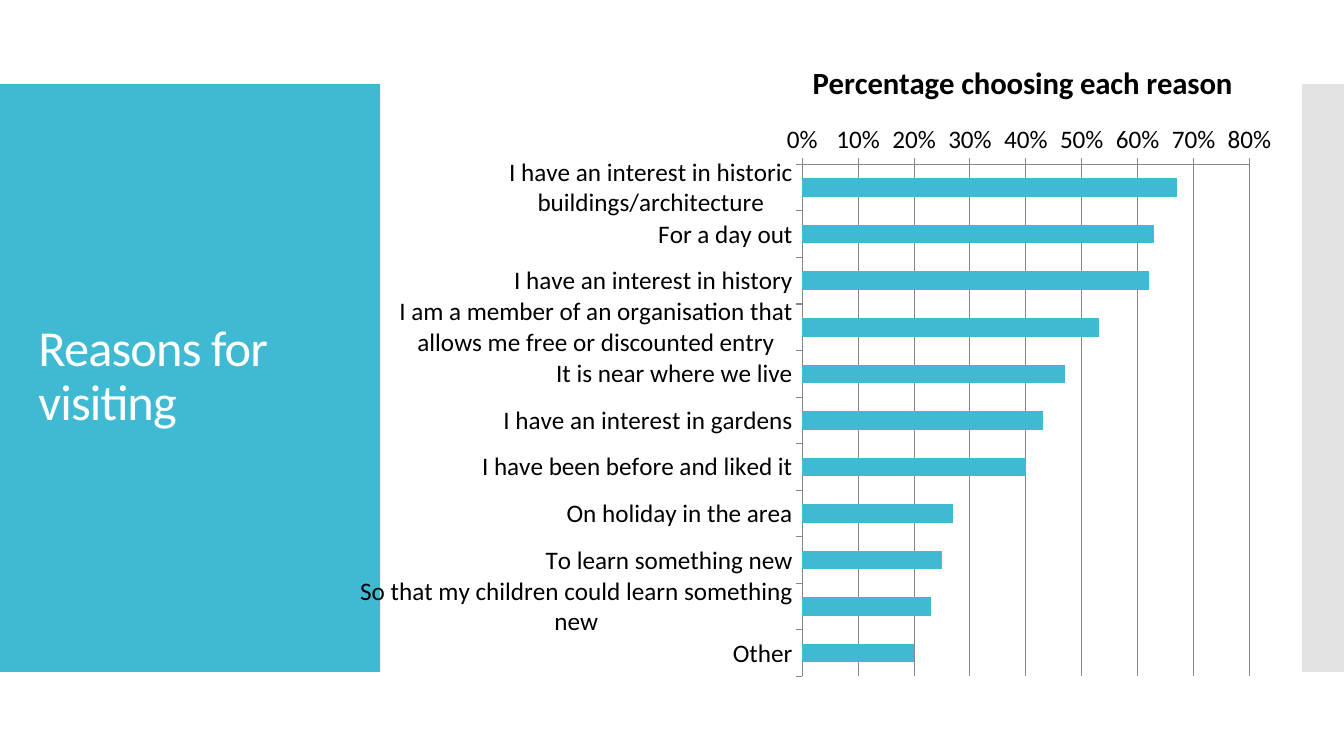
import dataclasses
import typing

import lxml.etree
import pptx
import pptx.chart.data
import pptx.dml.color
import pptx.enum.chart
import pptx.enum.shapes
import pptx.enum.text
import pptx.oxml.ns
import pptx.util

EMU_PER_PX = 9525
TITLE_ONLY_LAYOUT = 5


@dataclasses.dataclass(frozen=True)
class Theme:
    font: str = "Calibri"
    accent: str = "40BAD2"
    strip: str = "C8C8C8"
    axis: str = "868686"
    dark: str = "000000"
    light: str = "FFFFFF"
    heading_size: float = 36
    chart_title_size: float = 22
    label_size: float = 18


@dataclasses.dataclass(frozen=True)
class Area:
    left: int
    top: int
    width: int
    height: int

    def emu(self) -> dict[str, int]:
        return {name: value * EMU_PER_PX for name, value in dataclasses.asdict(self).items()}


@dataclasses.dataclass(frozen=True)
class Panel:
    area: Area
    colour: str
    opacity: int = 100


@dataclasses.dataclass(frozen=True)
class Reason:
    label: str
    share: float


THEME = Theme()
PAGE = Area(0, 0, 1280, 720)
TITLE_AREA = Area(27, 118, 309, 483)
CHART_AREA = Area(343, 47, 885, 612)
PANELS = [
    Panel(Area(0, 80, 362, 560), THEME.accent),
    Panel(Area(1240, 80, 40, 560), THEME.strip, opacity=50),
]
HEADING = "Reasons for visiting"
CHART_TITLE = "Percentage choosing each reason"
REASONS = [
    Reason("I have an interest in historic buildings/architecture", 0.67),
    Reason("For a day out", 0.63),
    Reason("I have an interest in history", 0.62),
    Reason("I am a member of an organisation that allows me free or discounted entry", 0.53),
    Reason("It is near where we live", 0.47),
    Reason("I have an interest in gardens", 0.43),
    Reason("I have been before and liked it", 0.4),
    Reason("On holiday in the area", 0.27),
    Reason("To learn something new", 0.25),
    Reason("So that my children could learn something new", 0.23),
    Reason("Other", 0.2),
]


def rgb(colour: str) -> pptx.dml.color.RGBColor:
    return pptx.dml.color.RGBColor.from_string(colour)


def apply(target: typing.Any, values: dict[str, typing.Any]) -> None:
    for name, value in values.items():
        setattr(target, name, value)


def format_font(font: typing.Any, size: float, colour: str, bold: bool = False) -> None:
    apply(font, {"name": THEME.font, "size": pptx.util.Pt(size), "bold": bold})
    font.color.rgb = rgb(colour)


def format_line(line: typing.Any) -> None:
    line.color.rgb = rgb(THEME.axis)
    line.width = pptx.util.Pt(0.75)


def draw_panel(page: typing.Any, panel: Panel) -> None:
    shape = page.shapes.add_shape(
        pptx.enum.shapes.MSO_SHAPE.RECTANGLE, **panel.area.emu()
    )
    shape.shadow.inherit = False
    shape.fill.solid()
    shape.fill.fore_color.rgb = rgb(panel.colour)
    shape.line.fill.background()
    if panel.opacity < 100:
        colour = shape.element.spPr.find(".//" + pptx.oxml.ns.qn("a:srgbClr"))
        alpha = lxml.etree.SubElement(colour, pptx.oxml.ns.qn("a:alpha"))
        alpha.set("val", str(panel.opacity * 1000))
    # Panels lie behind the title
    page.shapes.title.element.addprevious(shape.element)


def write_heading(page: typing.Any) -> None:
    title = page.shapes.title
    apply(title, TITLE_AREA.emu())
    apply(title.text_frame, {
        "text": HEADING,
        "word_wrap": True,
        "auto_size": pptx.enum.text.MSO_AUTO_SIZE.NONE,
        "vertical_anchor": pptx.enum.text.MSO_ANCHOR.MIDDLE,
    })
    para = title.text_frame.paragraphs[0]
    apply(para, {"alignment": pptx.enum.text.PP_ALIGN.LEFT, "line_spacing": 0.9})
    span = para.runs[0]
    format_font(span.font, THEME.heading_size, THEME.light)
    span.font._element.set("spc", "-60")


def make_layout(values: dict[str, typing.Any]) -> typing.Any:
    layout = lxml.etree.Element(pptx.oxml.ns.qn("c:layout"))
    manual = lxml.etree.SubElement(layout, pptx.oxml.ns.qn("c:manualLayout"))
    for name, value in values.items():
        item = lxml.etree.SubElement(manual, pptx.oxml.ns.qn("c:" + name))
        item.set("val", str(value))
    return layout


def place_chart_parts(chart: typing.Any) -> None:
    title = chart.chart_title._element
    plot_area = chart.element.find(".//" + pptx.oxml.ns.qn("c:plotArea"))
    for part in (title, plot_area):
        for layout in part.findall(pptx.oxml.ns.qn("c:layout")):
            part.remove(layout)
    edges = {"xMode": "edge", "yMode": "edge"}
    title.find(pptx.oxml.ns.qn("c:tx")).addnext(
        make_layout(edges | {"x": 0.48, "y": 0.01})
    )
    plot_area.insert(0, make_layout(
        {"layoutTarget": "inner"} | edges | {"x": 0.475, "y": 0.179, "w": 0.482, "h": 0.797}
    ))


def draw_chart(page: typing.Any) -> None:
    data = pptx.chart.data.CategoryChartData(number_format="0%")
    data.categories = [reason.label for reason in REASONS]
    data.add_series(CHART_TITLE, [reason.share for reason in REASONS])
    area = CHART_AREA.emu()
    chart = page.shapes.add_chart(
        pptx.enum.chart.XL_CHART_TYPE.BAR_CLUSTERED,
        area["left"], area["top"], area["width"], area["height"], data,
    ).chart
    format_font(chart.font, THEME.label_size, THEME.dark)
    apply(chart, {"has_legend": False, "has_title": True})
    chart.chart_title.text_frame.text = CHART_TITLE
    span = chart.chart_title.text_frame.paragraphs[0].runs[0]
    format_font(span.font, THEME.chart_title_size, THEME.dark, bold=True)

    # Bars
    plot = chart.plots[0]
    apply(plot, {"gap_width": 150, "vary_by_categories": False})
    bars = plot.series[0].format.fill
    bars.solid()
    bars.fore_color.rgb = rgb(THEME.accent)

    # Axes
    outside = pptx.enum.chart.XL_TICK_MARK.OUTSIDE
    apply(chart.category_axis, {"reverse_order": True, "major_tick_mark": outside})
    apply(chart.value_axis, {
        "minimum_scale": 0,
        "maximum_scale": 0.8,
        "major_unit": 0.1,
        "major_tick_mark": outside,
        "has_major_gridlines": True,
    })
    apply(chart.value_axis.tick_labels,
          {"number_format": "0%", "number_format_is_linked": False})
    for part in (chart.category_axis, chart.value_axis, chart.value_axis.major_gridlines):
        format_line(part.format.line)
    place_chart_parts(chart)


def main() -> None:
    deck = pptx.Presentation()
    size = PAGE.emu()
    apply(deck, {"slide_width": size["width"], "slide_height": size["height"]})
    page = deck.slides.add_slide(deck.slide_layouts[TITLE_ONLY_LAYOUT])
    for panel in PANELS:
        draw_panel(page, panel)
    write_heading(page)
    draw_chart(page)
    deck.save("out.pptx")


if __name__ == "__main__":
    main()
